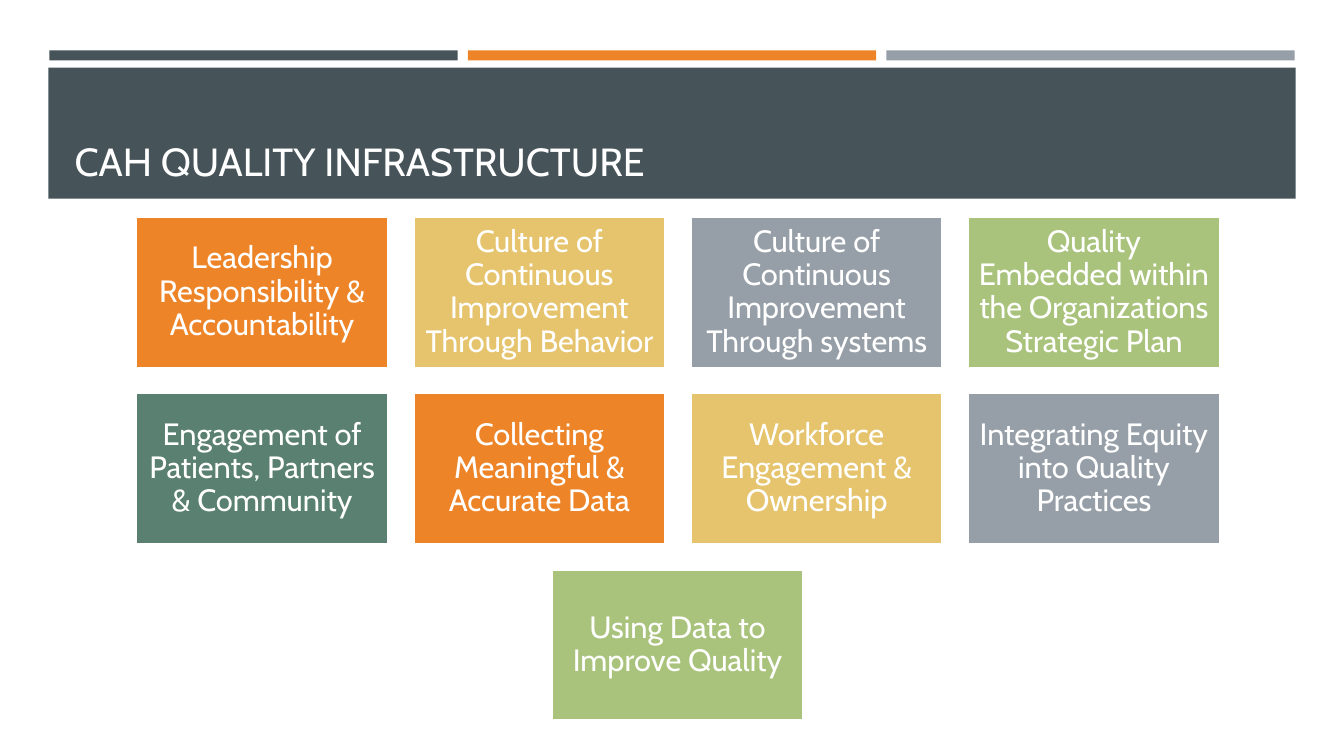
from pptx import Presentation
from pptx.dml.color import RGBColor
from pptx.enum.shapes import MSO_SHAPE as Shape
from pptx.enum.text import MSO_ANCHOR as Anchor, MSO_AUTO_SIZE as Fit, PP_ALIGN as Align
from pptx.util import Pt

PX = 9144  # EMU in one px, at 100 px to the inch
FONT = "Cabin"
WHITE = RGBColor(0xFF, 0xFF, 0xFF)
SLATE = RGBColor(0x46, 0x53, 0x59)
ORANGE = RGBColor(0xED, 0x84, 0x28)
GOLD = RGBColor(0xE6, 0xC4, 0x6D)
GRAY = RGBColor(0x96, 0x9F, 0xA7)
GREEN = RGBColor(0xA9, 0xC3, 0x7C)
TEAL = RGBColor(0x5A, 0x80, 0x71)

# Card grid
LEFT, TOP, WIDE, HIGH, GAP, COLS = 135, 215, 250, 150, 25, 4
CARDS = [
    ("Leadership Responsibility & Accountability", ORANGE),
    ("Culture of Continuous Improvement Through Behavior", GOLD),
    ("Culture of Continuous Improvement Through systems", GRAY),
    ("Quality Embedded within the Organizations Strategic Plan", GREEN),
    ("Engagement of Patients, Partners & Community", TEAL),
    ("Collecting Meaningful & Accurate Data", ORANGE),
    ("Workforce Engagement & Ownership", GOLD),
    ("Integrating Equity into Quality Practices", GRAY),
    ("Using Data to Improve Quality", GREEN),
]


def assign(item, values):
    for name, value in values.items():
        setattr(item, name, value)


def write(shape, text, size, align, frame):
    """Put one formatted paragraph into a shape."""
    body = shape.text_frame
    body.text = text
    assign(body, {"word_wrap": True, "auto_size": Fit.NONE, **frame})
    para = body.paragraphs[0]
    para.alignment = align
    assign(para.font, {"name": FONT, "size": Pt(size)})
    para.font.color.rgb = WHITE
    return para


def block(slide, left, top, width, height, fill):
    """Draw a plain filled rectangle."""
    box = slide.shapes.add_shape(
        Shape.RECTANGLE, left * PX, top * PX, width * PX, height * PX)
    box.shadow.inherit = False
    box.fill.solid()
    box.fill.fore_color.rgb = fill
    box.line.fill.background()
    return box


def card(slide, left, top, text, fill):
    """Draw a white-edged card with centred text."""
    box = block(slide, left, top, WIDE, HIGH, fill)
    box.line.color.rgb = WHITE
    box.line.width = Pt(1.75)
    sides = ("left", "right", "top", "bottom")
    frame = {f"margin_{side}": 9 * PX for side in sides}
    para = write(box, text, 22, Align.CENTER,
                 {"vertical_anchor": Anchor.MIDDLE, **frame})
    para.line_spacing = 0.9


def header(slide):
    # Three accent bars over the title band
    for i, fill in enumerate((SLATE, ORANGE, GRAY)):
        block(slide, 49 + 415 * i, 50, 405, 10, fill)
    block(slide, 48, 67, 1237, 130, SLATE)

    # Title, brought in front of the band
    title = slide.shapes.title
    slide.shapes.element.append(title.element)
    assign(title, {"left": 64 * PX, "top": 77 * PX,
                   "width": 1206 * PX, "height": 111 * PX})
    write(title, "CAH QUALITY INFRASTRUCTURE", 28, Align.LEFT,
          {"vertical_anchor": Anchor.BOTTOM})


def grid(slide):
    # Rows of cards; a short last row is centred
    for start in range(0, len(CARDS), COLS):
        row = CARDS[start:start + COLS]
        inset = (COLS - len(row)) * (WIDE + GAP) // 2
        top = TOP + start // COLS * (HIGH + GAP)
        for i, (text, fill) in enumerate(row):
            card(slide, LEFT + inset + i * (WIDE + GAP), top, text, fill)


def main():
    deck = Presentation()
    assign(deck, {"slide_width": 1333 * PX, "slide_height": 750 * PX})
    slide = deck.slides.add_slide(deck.slide_layouts[5])
    header(slide)
    grid(slide)
    deck.save("out.pptx")


if __name__ == "__main__":
    main()
